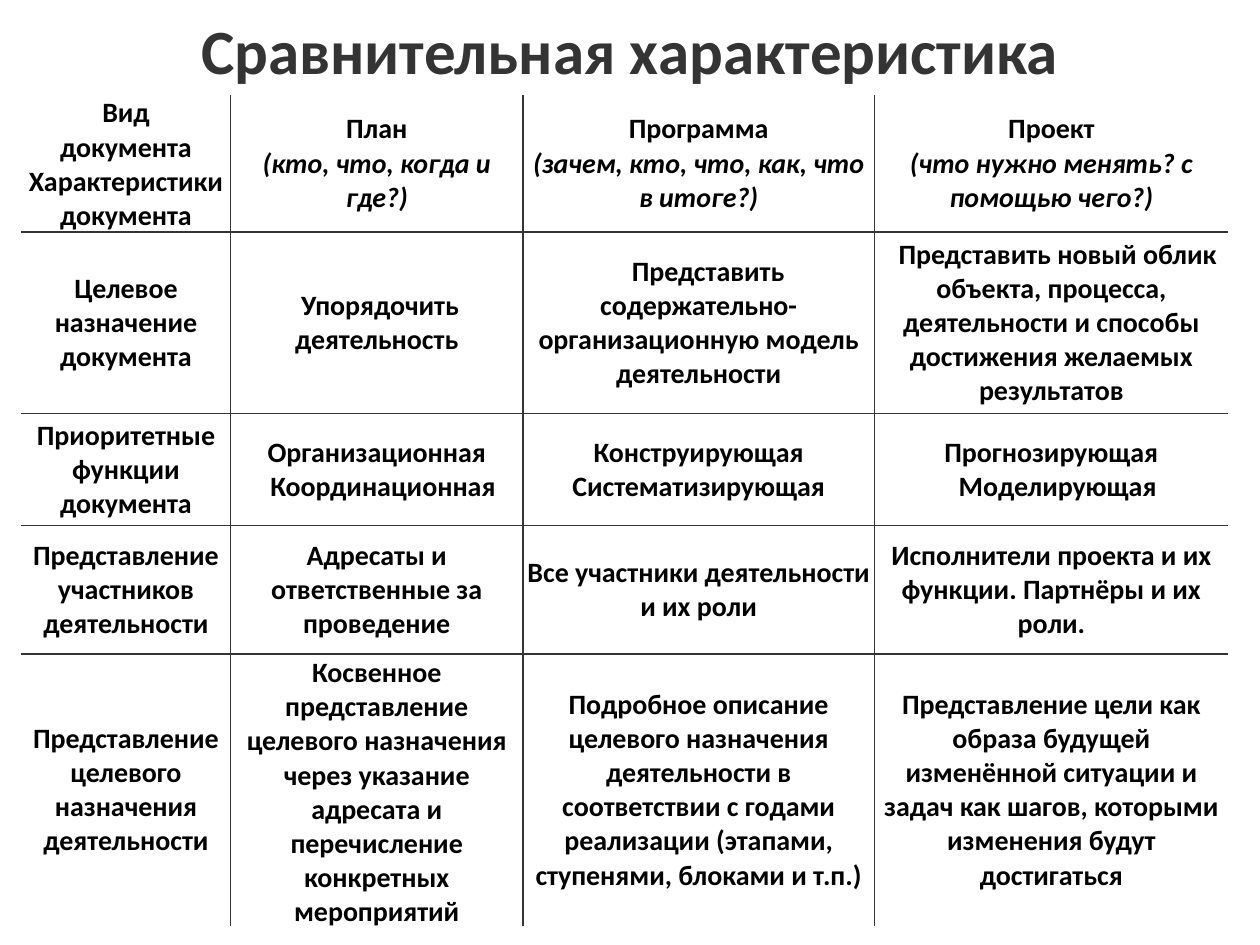
from dataclasses import dataclass

from lxml.etree import SubElement
from pptx import Presentation
from pptx.dml.color import RGBColor
from pptx.enum.text import MSO_ANCHOR, PP_ALIGN
from pptx.oxml.ns import qn
from pptx.util import Cm, Pt

FONT = "Calibri"
GRAY, BLACK = "343434", "000000"
COLS = (4.22, 5.89, 7.09, 7.13)
ROWS = (2.54, 3.66, 2.26, 2.59, 4.39)


@dataclass(frozen=True)
class Para:
    text: str
    slant: bool = False
    indent: float = 0  # first line, cm


# Table wording, one list of paragraphs per cell
GRID = [
    [
        [Para("Вид\nдокумента"), Para("Характеристики документа")],
        [Para("План"), Para("(кто, что, когда и где?)", True)],
        [Para("Программа"), Para("(зачем, кто, что, как, что в итоге?)", True)],
        [Para("Проект"), Para("(что нужно менять? с помощью чего?)", True)],
    ],
    [
        [Para("Целевое назначение документа")],
        [Para("Упорядочить деятельность", indent=0.13)],
        [Para("Представить содержательно-организационную модель деятельности",
              indent=0.38)],
        [Para("Представить новый облик объекта, процесса, деятельности "
              "и способы достижения желаемых результатов", indent=0.25)],
    ],
    [
        [Para("Приоритетные функции документа")],
        [Para("Организационная"), Para("Координационная", indent=0.25)],
        [Para("Конструирующая"), Para("Систематизирующая")],
        [Para("Прогнозирующая"), Para("Моделирующая", indent=0.25)],
    ],
    [
        [Para("Представление участников деятельности")],
        [Para("Адресаты и ответственные за проведение")],
        [Para("Все участники деятельности и их роли")],
        [Para("Исполнители проекта и их функции. Партнёры и их роли.")],
    ],
    [
        [Para("Представление целевого назначения деятельности")],
        [Para("Косвенное представление целевого назначения через указание "
              "адресата и перечисление конкретных мероприятий")],
        [Para("Подробное описание целевого назначения деятельности "
              "в соответствии с годами реализации (этапами, ступенями, "
              "блоками и т.п.)")],
        [Para("Представление цели как образа будущей изменённой ситуации "
              "и задач как шагов, которыми изменения будут достигаться")],
    ],
]


def tint(font, color: str) -> None:
    font.color.rgb = RGBColor.from_string(color)


def write(frame, paras: list[Para], size: float, color: str) -> None:
    frame.word_wrap = True
    for i, para in enumerate(paras):
        p = frame.add_paragraph() if i else frame.paragraphs[0]
        p.alignment = PP_ALIGN.CENTER
        if para.indent:
            p._p.get_or_add_pPr().set("indent", str(Cm(para.indent)))
        for j, part in enumerate(para.text.split("\n")):
            if j:
                p.add_line_break()
            run = p.add_run()
            run.text = part
            font = run.font
            font.name, font.size, font.bold = FONT, Pt(size), True
            font.italic = para.slant
            tint(font, color)


def edge(cell, sides: dict[str, bool]) -> None:
    """Draw the sides marked True and clear the rest."""
    props = cell._tc.get_or_add_tcPr()
    for i, (side, shown) in enumerate(sides.items()):
        line = SubElement(props, qn(f"a:ln{side}"), w=str(Pt(1)))
        if shown:
            fill = SubElement(line, qn("a:solidFill"))
            SubElement(fill, qn("a:srgbClr"), val=GRAY)
        else:
            SubElement(line, qn("a:noFill"))
        props.insert(i, line)


def fill_cell(cell, paras: list[Para], row: int, col: int) -> None:
    cell.margin_left = cell.margin_right = Cm(0.03)
    cell.margin_top = cell.margin_bottom = Cm(0.03)
    cell.vertical_anchor = MSO_ANCHOR.MIDDLE
    cell.fill.background()
    write(cell.text_frame, paras, 16, BLACK)
    edge(cell, {"L": col > 0, "R": col < len(COLS) - 1,
                "T": row > 0, "B": row < len(ROWS) - 1})


def main() -> None:
    deck = Presentation()
    deck.slide_width, deck.slide_height = Cm(25.4), Cm(19.05)
    slide = deck.slides.add_slide(deck.slide_layouts[6])

    # Title
    box = slide.shapes.add_textbox(Cm(1.27), Cm(0.43), Cm(22.86), Cm(1.14))
    box.text_frame.vertical_anchor = MSO_ANCHOR.MIDDLE
    write(box.text_frame, [Para("Сравнительная характеристика")], 36, GRAY)

    # Table
    table = slide.shapes.add_table(
        len(ROWS), len(COLS), Cm(0.43), Cm(1.91),
        Cm(sum(COLS)), Cm(sum(ROWS))).table
    table.first_row = table.horz_banding = False
    for col, width in zip(table.columns, COLS):
        col.width = Cm(width)
    for row, height in zip(table.rows, ROWS):
        row.height = Cm(height)
    for r, line in enumerate(GRID):
        for c, paras in enumerate(line):
            fill_cell(table.cell(r, c), paras, r, c)

    deck.save("out.pptx")


if __name__ == "__main__":
    main()
